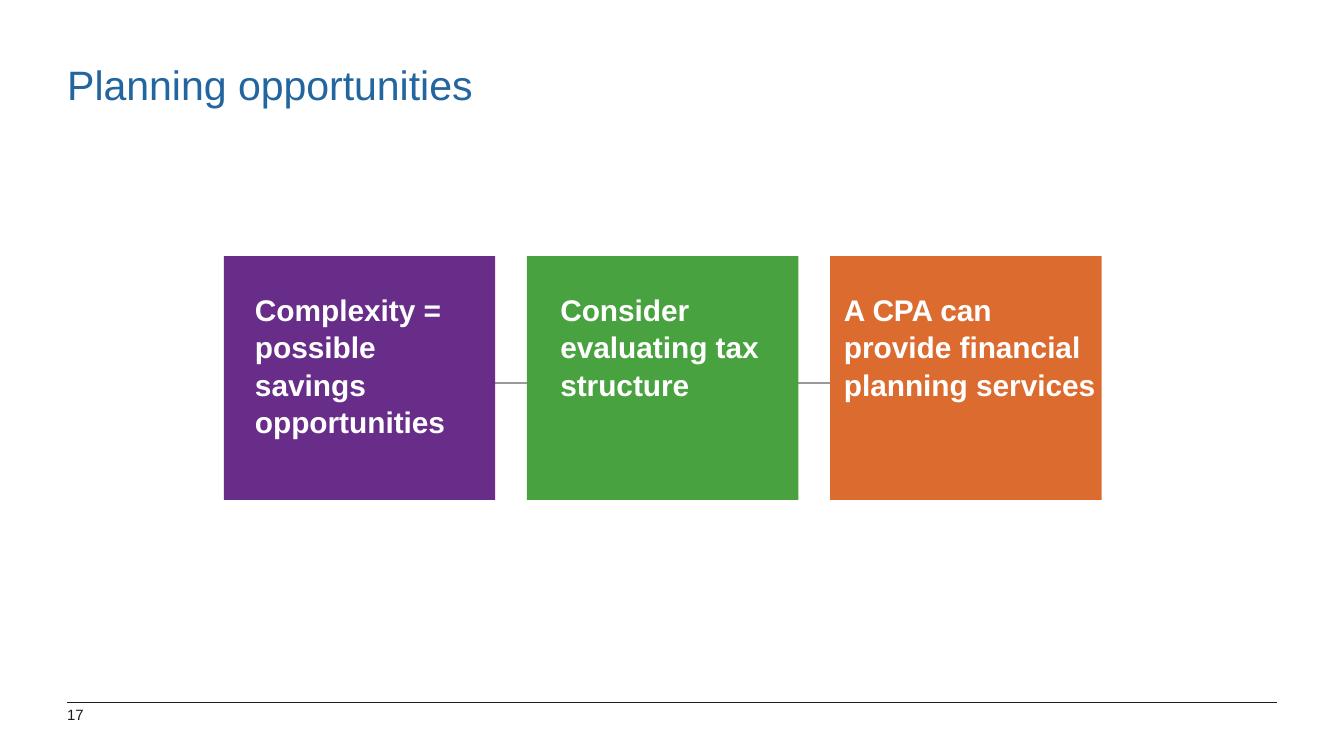
"""Build the "Planning opportunities" slide with three linked boxes."""
from pptx import Presentation
from pptx.dml.color import RGBColor as RGB
from pptx.enum.shapes import MSO_CONNECTOR as Connector, MSO_SHAPE as Shape
from pptx.enum.text import MSO_ANCHOR as Anchor, MSO_AUTO_SIZE as AutoSize, PP_ALIGN as Align
from pptx.oxml.xmlchemy import OxmlElement
from pptx.util import Cm, Pt

THEME = {
    "font": "Arial",
    "title": {"size": Pt(22), "bold": False, "color": RGB.from_string("22659F")},
    "message": {"size": Pt(16), "bold": True, "color": RGB.from_string("FFFFFF")},
    "number": {"size": Pt(8), "bold": False, "color": RGB.from_string("1D1D1D")},
    "footer_rule": RGB.from_string("1D1D1D"),
    "link": RGB.from_string("999999"),
}


def write(holder, text, role, inset_x=0, inset_y=0, spacing=1.0):
    frame = holder.text_frame
    frame.text = text
    frame_format = {
        "margin_left": Cm(inset_x), "margin_right": Cm(inset_x),
        "margin_top": Cm(inset_y), "margin_bottom": Cm(inset_y),
        "word_wrap": True, "auto_size": AutoSize.NONE, "vertical_anchor": Anchor.TOP,
    }
    for name, value in frame_format.items():
        setattr(frame, name, value)
    paragraph = frame.paragraphs[0]
    for name, value in {"alignment": Align.LEFT, "line_spacing": spacing, "space_before": Pt(0)}.items():
        setattr(paragraph, name, value)
    style = THEME[role]
    font = paragraph.runs[0].font
    for name, value in {"name": THEME["font"], "size": style["size"], "bold": style["bold"]}.items():
        setattr(font, name, value)
    font.color.rgb = style["color"]


def draw_rule(left, right, y, color, width):
    rule = slide.shapes.add_connector(Connector.STRAIGHT, Cm(left), Cm(y), Cm(right), Cm(y))
    rule.line.color.rgb = color
    rule.line.width = Pt(width)
    rule._element.spPr.append(OxmlElement("a:effectLst"))


deck = Presentation()
deck.slide_width, deck.slide_height = Cm(25.4), Cm(14.29)
slide = deck.slides.add_slide(deck.slide_layouts[5])

title = slide.shapes.title
title_place = {"left": Cm(1.27), "top": Cm(1.12), "width": Cm(21.59), "height": Cm(1.19)}
for name, value in title_place.items():
    setattr(title, name, value)
write(title, "Planning opportunities", "title")

draw_rule(1.27, 24.13, 13.28, THEME["footer_rule"], 0.5)
page_number = slide.shapes.add_textbox(Cm(1.27), Cm(13.34), Cm(0.91), Cm(0.56))
write(page_number, "17", "number")

draw_rule(6.1, 20.55, 7.24, THEME["link"], 1)

box_left, box_step, box_top, box_width, box_height = 4.23, 5.73, 4.84, 5.13, 4.61
opportunities = [
    ("Complexity = possible savings opportunities", "672D89", 4.57, 4.57, 3.0),
    ("Consider evaluating tax structure", "48A23F", 10.34, 4.75, 2.31),
    ("A CPA can provide financial planning services", "DC6B2F", 15.7, 5.46, 2.31),
]
for index, (message, fill, left, width, height) in enumerate(opportunities):
    box = slide.shapes.add_shape(
        Shape.RECTANGLE, Cm(box_left + index * box_step), Cm(box_top), Cm(box_width), Cm(box_height))
    box.shadow.inherit = False
    box.fill.solid()
    box.fill.fore_color.rgb = RGB.from_string(fill)
    box.line.fill.background()
    caption = slide.shapes.add_textbox(Cm(left), Cm(5.36), Cm(width), Cm(height))
    write(caption, message, "message", inset_x=0.25, inset_y=0.13, spacing=1.04)

deck.save("out.pptx")
